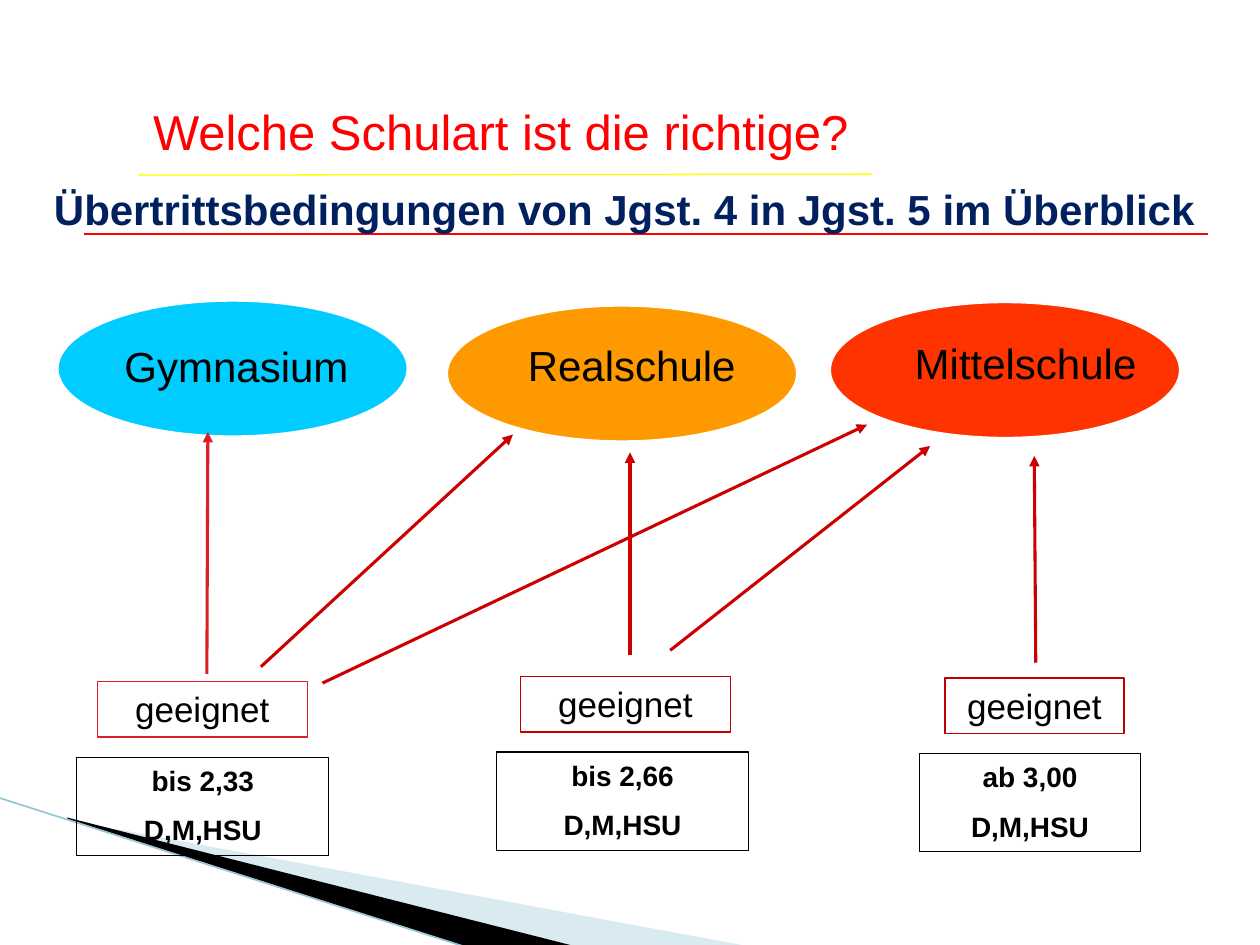
"""Build the slide that compares the entry conditions of three school types."""
from dataclasses import dataclass

from lxml import etree
from pptx import Presentation
from pptx.dml.color import RGBColor
from pptx.enum.shapes import MSO_CONNECTOR, MSO_SHAPE
from pptx.enum.text import MSO_ANCHOR, MSO_AUTO_SIZE, PP_ALIGN
from pptx.oxml.ns import qn
from pptx.util import Cm, Pt

STRAIGHT = MSO_CONNECTOR.STRAIGHT
OVAL, RECTANGLE = MSO_SHAPE.OVAL, MSO_SHAPE.RECTANGLE
TOP, FIT = MSO_ANCHOR.TOP, MSO_AUTO_SIZE.SHAPE_TO_FIT_TEXT
LEFT, CENTER = PP_ALIGN.LEFT, PP_ALIGN.CENTER


@dataclass(frozen=True)
class Theme:
    font: str = "Arial"
    black: str = "000000"
    white: str = "FFFFFF"
    title: str = "FF0000"
    title_rule: str = "FFFF00"
    subtitle: str = "002060"
    wedge: str = "A0CBDC"
    wedge_edge: str = "97C5D8"
    gymnasium: str = "00CCFF"
    realschule: str = "FF9900"
    mittelschule: str = "FF3300"
    arrow: str = "CC0000"
    crimson: str = "DA1F28"
    dark_red: str = "C00000"
    title_size: int = 28
    heading_size: int = 24
    fit_size: int = 20
    grade_size: int = 16
    grade_gap: int = 9
    thin: float = 0.75
    edge: float = 0.95
    thick: float = 1.75


def write_text(box, text, *, font, size, color, bold=False, align=CENTER, gap=0, indent=0):
    frame = box.text_frame
    frame.word_wrap = True
    frame.auto_size = FIT
    frame.vertical_anchor = TOP
    frame.margin_left = Cm(0.25 + indent)
    for index, words in enumerate(text.split("\n")):
        para = frame.add_paragraph() if index else frame.paragraphs[0]
        para.alignment = align
        if index:
            para.space_before = Pt(gap)
        span = para.add_run()
        span.text = words
        span.font.name = font
        span.font.size = Pt(size)
        span.font.bold = bold
        span.font.color.rgb = RGBColor.from_string(color)


class SlideBuilder:
    def __init__(self, page, theme):
        self.page = page
        self.theme = theme

    def text(self, place, text, **style):
        box = self.page.shapes.add_textbox(*map(Cm, place))
        write_text(box, text, font=self.theme.font, **style)

    def shape(self, kind, place, line, fill=None):
        shape = self.page.shapes.add_shape(kind, *map(Cm, place))
        shape.shadow.inherit = False
        if fill:
            shape.fill.solid()
            shape.fill.fore_color.rgb = RGBColor.from_string(fill)
        else:
            shape.fill.background()
        shape.line.color.rgb = RGBColor.from_string(line)
        shape.line.width = Pt(self.theme.thin)
        return shape

    def framed_text(self, place, text, line, **style):
        box = self.shape(RECTANGLE, place, line)
        write_text(box, text, font=self.theme.font, color=self.theme.black, **style)

    def line(self, start, end, color, width, arrow=False):
        line = self.page.shapes.add_connector(STRAIGHT, *map(Cm, start + end))
        line.line.color.rgb = RGBColor.from_string(color)
        line.line.width = Pt(width)
        if arrow:
            etree.SubElement(line.line._get_or_add_ln(), qn("a:tailEnd"), type="triangle")
        etree.SubElement(line._element.spPr, qn("a:effectLst"))

    def polygon(self, points, color, opacity=100):
        corners = [(Cm(x), Cm(y)) for x, y in points]
        builder = self.page.shapes.build_freeform(*corners[0])
        builder.add_line_segments(corners[1:], close=True)
        shape = builder.convert_to_shape()
        shape.shadow.inherit = False
        shape.fill.solid()
        shape.fill.fore_color.rgb = RGBColor.from_string(color)
        shape.line.fill.background()
        if opacity < 100:
            tint = shape._element.spPr.find(qn("a:solidFill"))[0]
            etree.SubElement(tint, qn("a:alpha"), val=str(opacity * 1000))


def draw_background(slide, theme):
    slide.polygon([(1.4, 16.54), (15.11, 19.08), (11.58, 19.08), (1.4, 16.51)], theme.wedge, 40)
    slide.polygon([(1.35, 16.48), (11.61, 19.08), (9.45, 19.1), (1.37, 16.51)], theme.black)
    slide.line((-0.03, 16.08), (9.42, 19.1), theme.wedge_edge, theme.edge)


def draw_headings(slide, theme):
    slide.text((1.7, 1.93, 16.79, 1.45), "Welche Schulart ist die richtige?",
               size=theme.title_size, color=theme.title)
    slide.line((2.79, 3.53), (17.58, 3.51), theme.title_rule, theme.thin)
    slide.line((1.7, 4.72), (24.36, 4.72), theme.title, theme.thin)
    slide.text((0.51, 3.58, 24.16, 1.3),
               "Übertrittsbedingungen von Jgst. 4 in Jgst. 5 im Überblick",
               size=theme.heading_size, color=theme.subtitle, bold=True)


def draw_schools(slide, theme):
    schools = [
        ("Mittelschule", theme.mittelschule, (16.74, 6.1), (17.48, 6.68)),
        ("Realschule", theme.realschule, (9.02, 6.17), (9.68, 6.71)),
        ("Gymnasium", theme.gymnasium, (1.17, 6.07), (1.55, 6.73)),
    ]
    for name, fill, oval, label in schools:
        slide.shape(OVAL, oval + (7.04, 2.72), theme.white, fill)
        slide.text(label + (5.92, 1.28), name, size=theme.heading_size,
                   color=theme.black, align=LEFT, indent=0.71)


def draw_conditions(slide, theme):
    conditions = [
        ("bis 2,33", (1.55, 15.27, 5.08), (1.96, 13.74, 4.24), theme.crimson),
        ("bis 2,66", (10.01, 15.16, 5.08), (10.49, 13.64, 4.24), theme.dark_red),
        ("ab 3,00", (18.54, 15.19, 4.45), (19.05, 13.67, 3.61), theme.dark_red),
    ]
    for grade, grade_place, fit_place, color in conditions:
        slide.framed_text(grade_place + (1.98,), f"{grade}\nD,M,HSU", theme.black,
                          size=theme.grade_size, bold=True, gap=theme.grade_gap)
        slide.framed_text(fit_place + (1.12,), "geeignet", color, size=theme.fit_size)


def draw_arrows(slide, theme):
    arrows = [
        ((4.17, 13.59), (4.19, 8.71), theme.crimson),
        ((5.26, 13.44), (10.34, 8.76), theme.arrow),
        ((20.88, 13.36), (20.85, 9.19), theme.arrow),
        ((13.51, 13.11), (18.75, 8.99), theme.arrow),
        ((6.5, 13.77), (17.48, 8.56), theme.arrow),
        ((12.7, 13.21), (12.7, 9.12), theme.arrow),
    ]
    for start, end, color in arrows:
        slide.line(start, end, color, theme.thick, arrow=True)


def main():
    deck = Presentation()
    deck.slide_width, deck.slide_height = Cm(25.4), Cm(19.05)
    theme = Theme()
    slide = SlideBuilder(deck.slides.add_slide(deck.slide_layouts[6]), theme)
    for draw in (draw_background, draw_headings, draw_schools, draw_conditions, draw_arrows):
        draw(slide, theme)
    deck.save("out.pptx")


if __name__ == "__main__":
    main()
